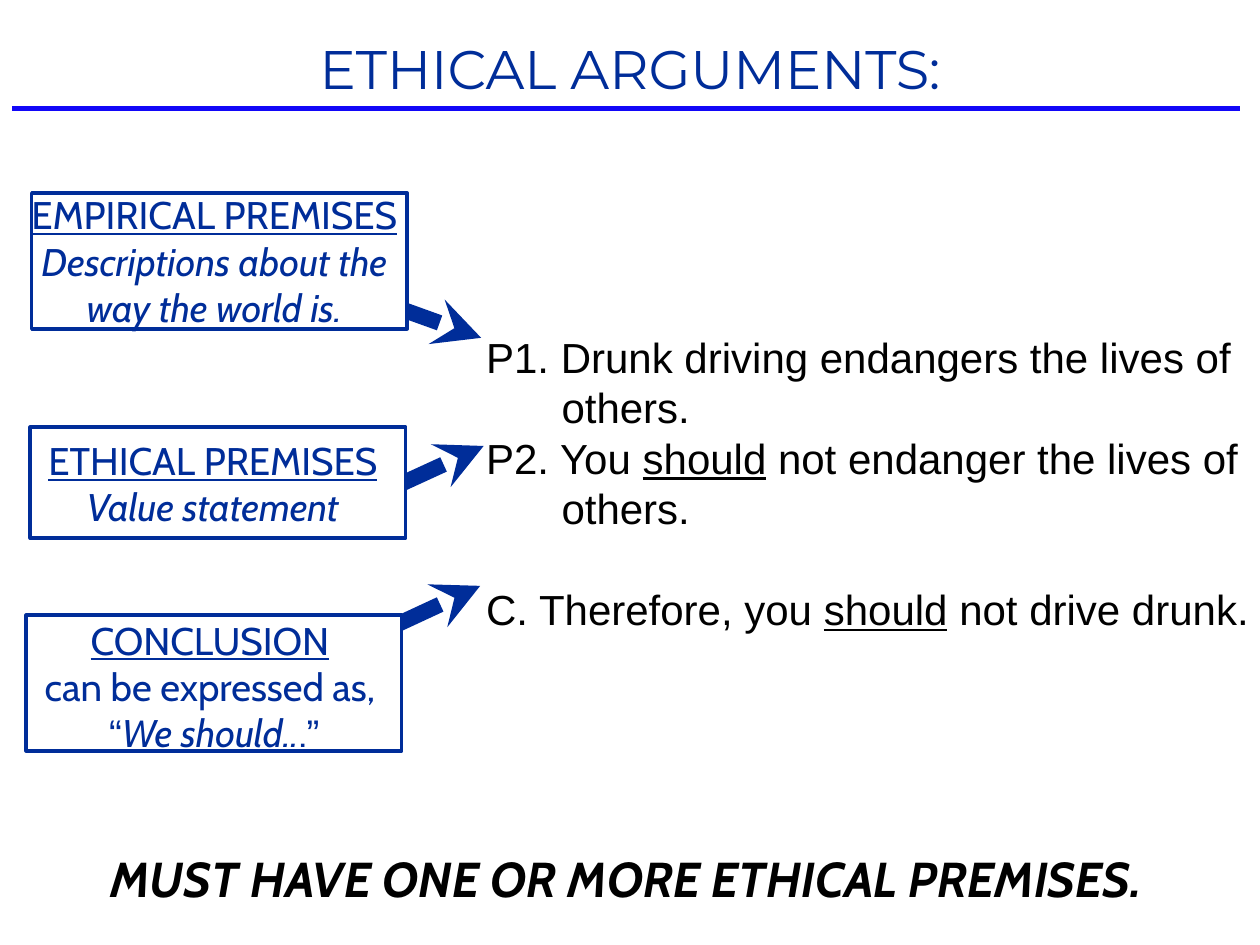
from dataclasses import dataclass

import lxml.etree
import pptx
import pptx.dml.color
import pptx.enum.shapes
import pptx.enum.text
import pptx.oxml.ns
import pptx.util
from pptx.util import Cm, Pt

NAVY, BLUE, BLACK, WHITE = "002D99", "1207F8", "000000", "FFFFFF"
CENTER = pptx.enum.text.PP_ALIGN.CENTER
LEFT = pptx.enum.text.PP_ALIGN.LEFT
BODY_LINE = Pt(28.8)


@dataclass(frozen=True)
class Run:
    text: str
    underline: bool = False
    italic: bool = False
    font: str | None = None


@dataclass(frozen=True)
class Area:
    """Position and size in centimetres."""
    left: float
    top: float
    width: float
    height: float

    def lengths(self) -> list[pptx.util.Length]:
        return [Cm(v) for v in (self.left, self.top, self.width, self.height)]


@dataclass(frozen=True)
class Callout:
    frame: Area
    label: Area
    arrow_start: tuple[float, float]
    arrow_tip: tuple[float, float]
    paragraphs: list[list[Run]]


CALLOUTS = [
    Callout(Area(0.61, 8.61, 7.57, 2.24), Area(0.48, 8.79, 7.62, 1.91),
            (8.03, 9.78), (9.75, 8.99),
            [[Run("ETHICAL PREMISES", underline=True)],
             [Run("Value statement", italic=True)]]),
    Callout(Area(0.53, 12.4, 7.57, 2.74), Area(0.51, 12.45, 7.62, 2.77),
            (7.98, 12.6), (9.68, 11.81),
            [[Run("CONCLUSION", underline=True), Run(" ")],
             [Run("can be expressed as, ")],
             [Run("“", font="Arial"), Run("We should..", italic=True),
              Run("."), Run("”", font="Arial")]]),
    Callout(Area(0.64, 3.89, 7.57, 2.74), Area(0.51, 3.86, 7.62, 2.79),
            (7.92, 6.17), (9.7, 6.81),
            [[Run("EMPIRICAL PREMISES", underline=True)],
             [Run("Descriptions about the way the world is.", italic=True)]]),
]

ARGUMENT = [
    [Run("P1. Drunk driving endangers the lives of others.")],
    [Run("P2. You "), Run("should", underline=True),
     Run(" not endanger the lives of others.")],
    [Run("C. Therefore, you "), Run("should", underline=True),
     Run(" not drive drunk.")],
]


def color(value: str) -> pptx.dml.color.RGBColor:
    return pptx.dml.color.RGBColor.from_string(value)


def write_text(shape, paragraphs: list[list[Run]], font: str, size: float,
               ink: str, alignment=CENTER) -> None:
    frame = shape.text_frame
    frame.word_wrap = True
    frame.auto_size = pptx.enum.text.MSO_AUTO_SIZE.NONE
    frame.vertical_anchor = pptx.enum.text.MSO_ANCHOR.MIDDLE
    frame.margin_left = frame.margin_right = 0
    frame.margin_top = frame.margin_bottom = 0
    for index, runs in enumerate(paragraphs):
        paragraph = frame.add_paragraph() if index else frame.paragraphs[0]
        paragraph.alignment = alignment
        paragraph.space_before = Pt(0)
        paragraph.font.name = font
        paragraph.font.size = Pt(size)
        paragraph.font.color.rgb = color(ink)
        for item in runs:
            run = paragraph.add_run()
            run.text = item.text
            if item.underline:
                run.font.underline = True
            if item.italic:
                run.font.italic = True
            if item.font:
                run.font.name = item.font


def place(shape, area: Area) -> None:
    shape.left, shape.top, shape.width, shape.height = area.lengths()


def add_line(shapes, start: tuple[float, float], end: tuple[float, float],
             ink: str, width: float, arrow: bool = False) -> None:
    line = shapes.add_connector(pptx.enum.shapes.MSO_CONNECTOR.STRAIGHT,
                                *(Cm(v) for v in start + end))
    line.line.color.rgb = color(ink)
    line.line.width = Pt(width)
    qn = pptx.oxml.ns.qn
    if arrow:
        lxml.etree.SubElement(line.line._get_or_add_ln(), qn("a:tailEnd"),
                              type="stealth")
    lxml.etree.SubElement(line._element.spPr, qn("a:effectLst"))


def add_callout(slide, callout: Callout) -> None:
    shapes = slide.shapes.add_group_shape().shapes
    add_line(shapes, callout.arrow_start, callout.arrow_tip, NAVY, 9, arrow=True)
    box = shapes.add_shape(pptx.enum.shapes.MSO_SHAPE.RECTANGLE,
                           *callout.frame.lengths())
    box.shadow.inherit = False
    box.fill.solid()
    box.fill.fore_color.rgb = color(WHITE)
    box.line.color.rgb = color(NAVY)
    box.line.width = Pt(2)
    label = shapes.add_textbox(*callout.label.lengths())
    write_text(label, callout.paragraphs, "Cabin", 22, NAVY)


def add_argument(body) -> None:
    """Fill the body with unbulleted, hanging paragraphs."""
    place(body, Area(9.8, 6.27, 15.44, 6.91))
    write_text(body, ARGUMENT, "Arial", 24, BLACK, LEFT)
    for paragraph in body.text_frame.paragraphs:
        paragraph.line_spacing = BODY_LINE
        properties = paragraph._p.get_or_add_pPr()
        properties.set("marL", str(Cm(1.52)))
        properties.set("indent", str(-Cm(1.52)))
    # The conclusion stands one line apart from the premises.
    body.text_frame.paragraphs[-1].space_before = BODY_LINE
    for paragraph in body.text_frame.paragraphs:
        properties = paragraph._p.get_or_add_pPr()
        bullet = lxml.etree.Element(pptx.oxml.ns.qn("a:buNone"))
        properties.find(pptx.oxml.ns.qn("a:defRPr")).addprevious(bullet)


def main() -> None:
    presentation = pptx.Presentation()
    presentation.slide_width, presentation.slide_height = Cm(25.4), Cm(19.05)
    slide = presentation.slides.add_slide(presentation.slide_layouts[1])

    add_line(slide.shapes, (0.25, 2.18), (24.99, 2.18), BLUE, 3)
    title = slide.shapes.title
    place(title, Area(0.15, 0.51, 25.1, 1.7))
    write_text(title, [[Run("ETHICAL ARGUMENTS:")]], "Montserrat", 31, NAVY)
    add_argument(slide.placeholders[1])
    for callout in CALLOUTS:
        add_callout(slide, callout)

    reminder = slide.shapes.add_textbox(*Area(0, 17.04, 25.25, 1.3).lengths())
    write_text(reminder, [[Run("MUST HAVE ONE OR MORE ETHICAL PREMISES.")]],
               "Cabin", 28, BLACK)
    reminder_font = reminder.text_frame.paragraphs[0].font
    reminder_font.bold = reminder_font.italic = True

    presentation.save("out.pptx")


if __name__ == "__main__":
    main()
